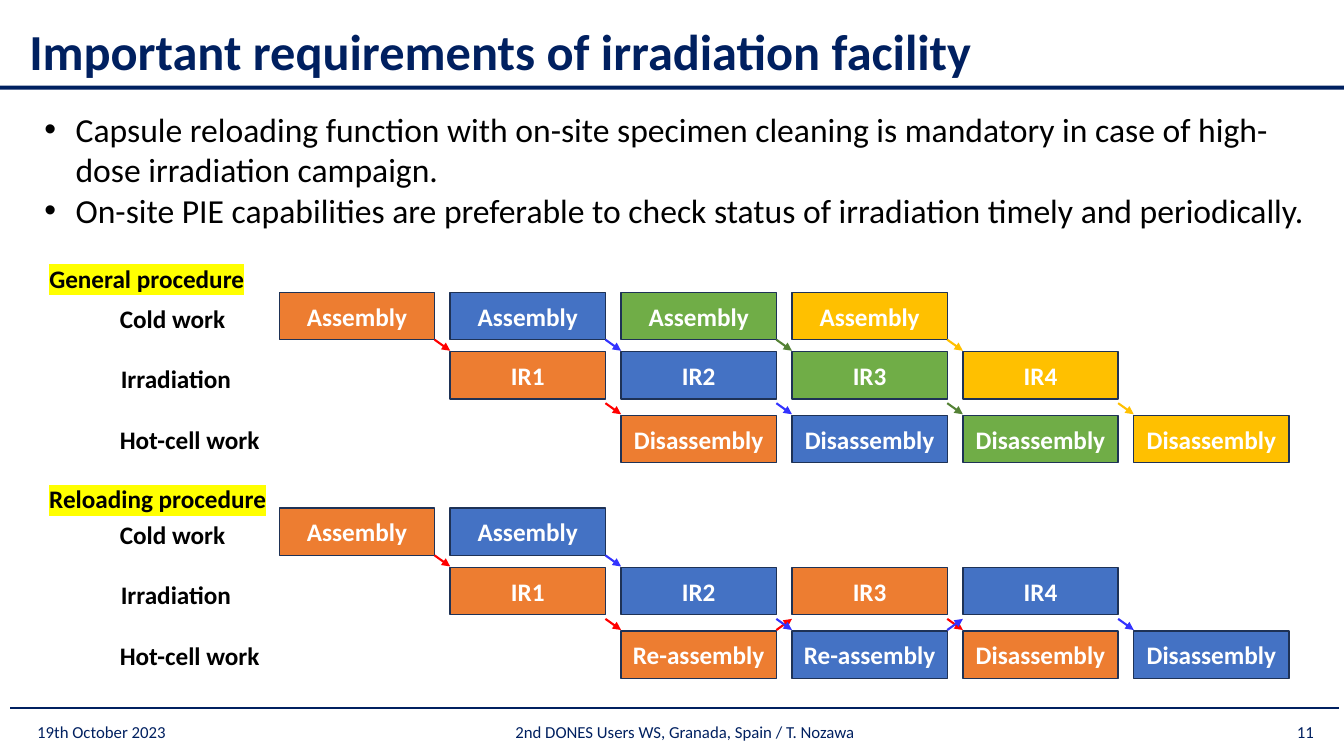
from dataclasses import dataclass
from itertools import pairwise

from lxml.etree import SubElement
from pptx import Presentation
from pptx.dml.color import RGBColor
from pptx.enum.shapes import MSO_CONNECTOR, MSO_SHAPE
from pptx.enum.text import MSO_ANCHOR, MSO_AUTO_SIZE, PP_ALIGN
from pptx.oxml import parse_xml
from pptx.oxml.ns import nsdecls, qn
from pptx.slide import Slide
from pptx.text.text import TextFrame
from pptx.util import Inches, Pt

FONT = "Calibri"
NAVY = RGBColor(0x00, 0x20, 0x60)
OUTLINE = RGBColor(0x1E, 0x32, 0x56)
BLACK = RGBColor(0x00, 0x00, 0x00)
WHITE = RGBColor(0xFF, 0xFF, 0xFF)
ORANGE = RGBColor(0xED, 0x7D, 0x31)
BLUE = RGBColor(0x44, 0x72, 0xC4)
GREEN = RGBColor(0x70, 0xAD, 0x47)
GOLD = RGBColor(0xFF, 0xC0, 0x00)
RED_ARROW = RGBColor(0xFF, 0x00, 0x00)
BLUE_ARROW = RGBColor(0x33, 0x33, 0xFF)
GREEN_ARROW = RGBColor(0x54, 0x82, 0x35)

FIRST_LEFT, COLUMN_STEP = 2.77, 1.695
STEP_WIDTH, STEP_HEIGHT = 1.54, 0.47
ROW_OFFSETS = (0, 0.59, 1.22)
ARROW_OFFSETS = (0.47, 1.1)  # one per gap between neighbouring rows
ARROW_DROP = 0.11
ROW_SEQUENCE = (0, 1, 2, 1, 2)  # a reloaded capsule returns to irradiation

BULLETS = (
    "Capsule reloading function with on-site specimen cleaning is mandatory "
    "in case of high-dose irradiation campaign.",
    "On-site PIE capabilities are preferable to check status of irradiation "
    "timely and periodically.",
)


@dataclass(frozen=True)
class Capsule:
    start_column: int
    fill: RGBColor
    arrow: RGBColor
    steps: tuple[str, ...]


@dataclass(frozen=True)
class Procedure:
    heading: str
    heading_top: float
    heading_width: float
    top: float
    capsules: tuple[Capsule, ...]


@dataclass(frozen=True)
class Label:
    text: str
    left: float
    width: float


@dataclass(frozen=True)
class FooterItem:
    text: str
    left: float
    width: float
    align: PP_ALIGN


ROW_LABELS = (
    Label("Cold work", 1.09, 1.26),
    Label("Irradiation", 1.1, 1.3),
    Label("Hot-cell work", 1.09, 1.6),
)
PROCEDURES = (
    Procedure("General procedure", 2.56, 2.15, 2.9, (
        Capsule(0, ORANGE, RED_ARROW, ("Assembly", "IR1", "Disassembly")),
        Capsule(1, BLUE, BLUE_ARROW, ("Assembly", "IR2", "Disassembly")),
        Capsule(2, GREEN, GREEN_ARROW, ("Assembly", "IR3", "Disassembly")),
        Capsule(3, GOLD, GOLD, ("Assembly", "IR4", "Disassembly")),
    )),
    Procedure("Reloading procedure", 4.75, 2.37, 5.04, (
        Capsule(0, ORANGE, RED_ARROW,
                ("Assembly", "IR1", "Re-assembly", "IR3", "Disassembly")),
        Capsule(1, BLUE, BLUE_ARROW,
                ("Assembly", "IR2", "Re-assembly", "IR4", "Disassembly")),
    )),
)
FOOTER = (
    FooterItem("19th October 2023", 0.27, 1.79, PP_ALIGN.LEFT),
    FooterItem("2nd DONES Users WS, Granada, Spain / T. Nozawa", 2.28, 9.03,
               PP_ALIGN.CENTER),
    FooterItem("11", 12.56, 0.57, PP_ALIGN.RIGHT),
)


def format_text(frame: TextFrame, size: float, color: RGBColor,
                bold: bool = False, align: PP_ALIGN = PP_ALIGN.LEFT) -> None:
    for para in frame.paragraphs:
        para.alignment = align
        for span in para.runs:
            span.font.name = FONT
            span.font.size = Pt(size)
            span.font.bold = bold
            span.font.color.rgb = color


def add_text(page: Slide, text: str, left: float, top: float, width: float) -> TextFrame:
    box = page.shapes.add_textbox(Inches(left), Inches(top), Inches(width), Inches(0.4))
    box.text_frame.text = text
    return box.text_frame


def add_label(page: Slide, text: str, left: float, top: float, width: float) -> TextFrame:
    frame = add_text(page, text, left, top, width)
    frame.word_wrap = False
    format_text(frame, 18, BLACK, bold=True)
    return frame


def add_line(page: Slide, start: tuple[float, float], end: tuple[float, float],
             color: RGBColor, arrow: bool = False) -> None:
    line = page.shapes.add_connector(
        MSO_CONNECTOR.STRAIGHT, *(Inches(value) for value in start + end))
    line.line.color.rgb = color
    line.line.width = Pt(1.5)
    if arrow:
        SubElement(line.line._get_or_add_ln(), qn("a:tailEnd"), type="triangle")
    SubElement(line._element.spPr, qn("a:effectLst"))


def add_rectangle(page: Slide, left: float, top: float, width: float,
                  height: float, fill: RGBColor):
    box = page.shapes.add_shape(MSO_SHAPE.RECTANGLE, Inches(left), Inches(top),
                                Inches(width), Inches(height))
    box.shadow.inherit = False
    box.fill.solid()
    box.fill.fore_color.rgb = fill
    box.line.fill.background()
    return box


def add_step(page: Slide, text: str, left: float, top: float, fill: RGBColor) -> None:
    box = add_rectangle(page, left, top, STEP_WIDTH, STEP_HEIGHT, fill)
    box.line.color.rgb = OUTLINE
    box.line.width = Pt(1)
    box.text_frame.text = text
    box.text_frame.vertical_anchor = MSO_ANCHOR.MIDDLE
    format_text(box.text_frame, 18, WHITE, bold=True, align=PP_ALIGN.CENTER)


def add_capsule(page: Slide, capsule: Capsule, top: float) -> None:
    """Draw the steps of one capsule and the arrows that link them."""
    lefts = [FIRST_LEFT + COLUMN_STEP * (capsule.start_column + index)
             for index in range(len(capsule.steps))]
    places = list(zip(lefts, ROW_SEQUENCE))
    for text, (left, row) in zip(capsule.steps, places):
        add_step(page, text, left, top + ROW_OFFSETS[row], capsule.fill)
    for (left, row), (next_left, next_row) in pairwise(places):
        upper = top + ARROW_OFFSETS[min(row, next_row)]
        lower = upper + ARROW_DROP
        start_y, end_y = (upper, lower) if next_row > row else (lower, upper)
        add_line(page, (left + STEP_WIDTH, start_y), (next_left, end_y),
                 capsule.arrow, arrow=True)


def add_procedure(page: Slide, procedure: Procedure) -> None:
    heading = add_label(page, procedure.heading, 0.39, procedure.heading_top,
                        procedure.heading_width)
    solid_fill = heading.paragraphs[0].runs[0].font._element.find(qn("a:solidFill"))
    solid_fill.addnext(parse_xml(
        f'<a:highlight {nsdecls("a")}><a:srgbClr val="FFFF00"/></a:highlight>'))
    for index, label in enumerate(ROW_LABELS):
        add_label(page, label.text, label.left, procedure.top + 0.06 + 0.6 * index,
                  label.width)
    for capsule in procedure.capsules:
        add_capsule(page, capsule, procedure.top)


def place(shape, left: float, top: float, width: float, height: float) -> None:
    shape.left, shape.top = Inches(left), Inches(top)
    shape.width, shape.height = Inches(width), Inches(height)
    shape.text_frame.auto_size = MSO_AUTO_SIZE.NONE


def fill_placeholders(page: Slide) -> None:
    title, body = page.shapes.title, page.placeholders[1]
    place(title, 0.19, 0.16, 12.74, 0.75)
    title.text_frame.text = "Important requirements of irradiation facility"
    title.text_frame.vertical_anchor = MSO_ANCHOR.MIDDLE
    title.text_frame.paragraphs[0].line_spacing = 0.9
    format_text(title.text_frame, 36, NAVY, bold=True)
    place(body, 0.34, 1.03, 12.79, 1.31)
    body.text_frame.text = "\n".join(BULLETS)
    for para in body.text_frame.paragraphs:
        para.space_before = Pt(0)
        properties = para._p.get_or_add_pPr()
        properties.set("marL", str(Inches(0.31)))
        properties.set("indent", str(-Inches(0.31)))
        SubElement(properties, qn("a:buFont"), typeface="Arial")
        SubElement(properties, qn("a:buChar"), char="•")
    format_text(body.text_frame, 24, BLACK)


def main() -> None:
    deck = Presentation()
    deck.slide_width, deck.slide_height = Inches(13.33), Inches(7.5)
    page = deck.slides.add_slide(deck.slide_layouts[1])
    add_line(page, (0.1, 7.02), (13.28, 7.02), NAVY)
    add_rectangle(page, 0, 0.85, 13.33, 0.04, NAVY)
    fill_placeholders(page)
    for item in FOOTER:
        frame = add_text(page, item.text, item.left, 7.06, item.width)
        frame.word_wrap = True
        frame.vertical_anchor = MSO_ANCHOR.MIDDLE
        format_text(frame, 12, NAVY, align=item.align)
    for procedure in PROCEDURES:
        add_procedure(page, procedure)
    deck.save("out.pptx")


if __name__ == "__main__":
    main()
